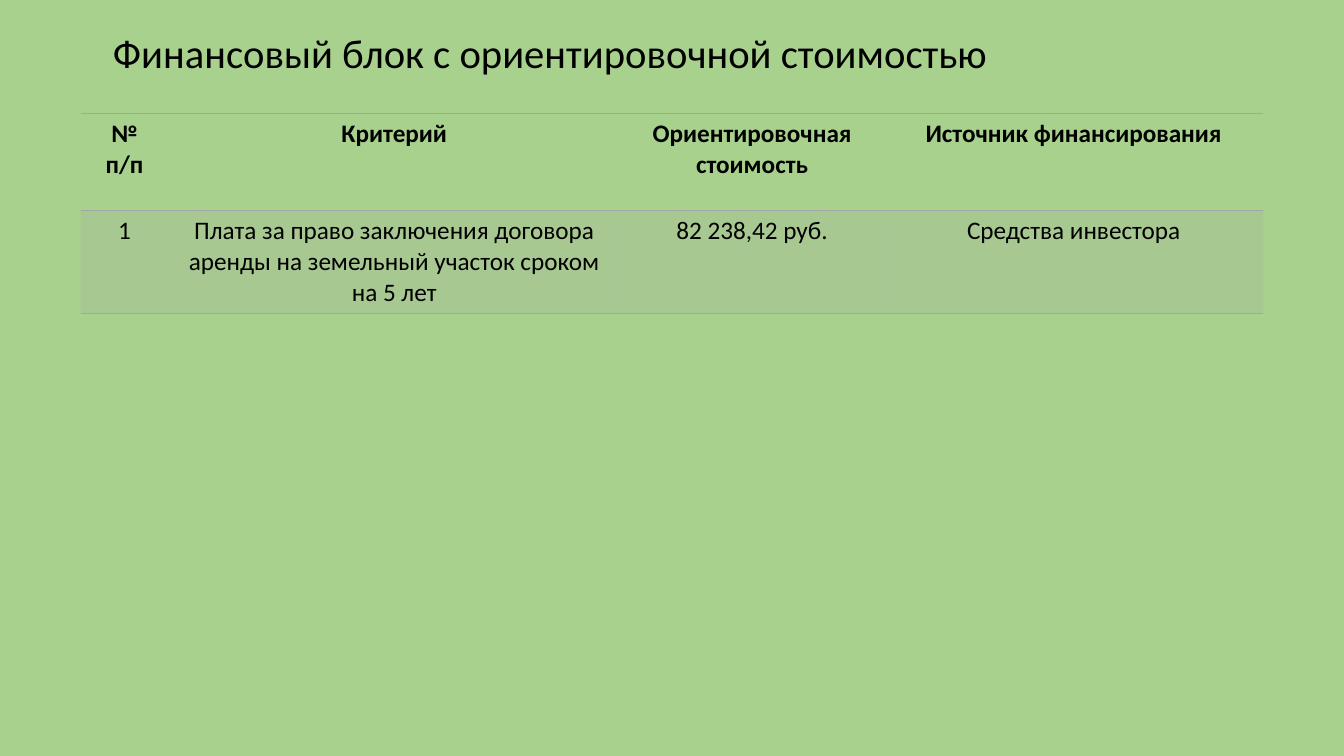
from lxml.etree import SubElement
from pptx import Presentation
from pptx.dml.color import RGBColor
from pptx.enum.text import MSO_ANCHOR, PP_ALIGN
from pptx.oxml.ns import qn
from pptx.util import Inches, Pt

COLORS = {"background": "A9D18E", "text": "000000", "gray": "A5A5A5"}
FONT = "Calibri"
PLAIN_TABLE_STYLE = "{2D5ABB26-0587-4C30-8999-92F81FD0307C}"
COLUMN_WIDTHS = (0.87, 4.48, 2.62, 3.76)
ROW_HEIGHTS = (0.96, 1.02)
COSTS = (
    ("№ п/п", "Критерий", "Ориентировочная стоимость", "Источник финансирования"),
    (
        "1",
        "Плата за право заключения договора аренды на земельный участок сроком на 5 лет",
        "82 238,42 руб.",
        "Средства инвестора",
    ),
)


def color(name):
    return RGBColor.from_string(COLORS[name])


def write(paragraph, text, size, bold=False):
    run = paragraph.add_run()
    run.text = text
    run.font.name = FONT
    run.font.size = Pt(size)
    run.font.bold = bold
    run.font.color.rgb = color("text")


def add_border(cell, side):
    line = SubElement(cell._tc.get_or_add_tcPr(), qn(f"a:{side}"), w=str(Pt(1)))
    fill = SubElement(line, qn("a:solidFill"))
    SubElement(fill, qn("a:srgbClr"), val=COLORS["gray"])


def shade(cell, opacity):
    cell.fill.solid()
    cell.fill.fore_color.rgb = color("gray")
    tint = cell._tc.tcPr.find(".//" + qn("a:solidFill") + "[last()]")
    tint = cell._tc.tcPr.find(qn("a:solidFill")).find(qn("a:srgbClr"))
    SubElement(tint, qn("a:alpha"), val=str(opacity * 1000))


def place_title(slide, left, top, width, height):
    title = slide.shapes.title
    title.left, title.top = Inches(left), Inches(top)
    title.width, title.height = Inches(width), Inches(height)
    frame = title.text_frame
    frame.word_wrap = True
    frame.vertical_anchor = MSO_ANCHOR.MIDDLE
    paragraph = frame.paragraphs[0]
    paragraph.alignment = PP_ALIGN.LEFT
    paragraph.line_spacing = 0.9
    write(paragraph, "Финансовый блок с ориентировочной стоимостью", 29)


def place_cost_table(slide, left, top):
    table = slide.shapes.add_table(
        len(COSTS), len(COLUMN_WIDTHS), Inches(left), Inches(top),
        Inches(sum(COLUMN_WIDTHS)), Inches(sum(ROW_HEIGHTS)),
    ).table
    table._tbl.tblPr.find(qn("a:tableStyleId")).text = PLAIN_TABLE_STYLE
    table.horz_banding = False
    for column, width in zip(table.columns, COLUMN_WIDTHS):
        column.width = Inches(width)
    for row, height, texts in zip(table.rows, ROW_HEIGHTS, COSTS):
        row.height = Inches(height)
        is_header = texts is COSTS[0]
        for cell, text in zip(row.cells, texts):
            paragraph = cell.text_frame.paragraphs[0]
            paragraph.alignment = PP_ALIGN.CENTER
            write(paragraph, text, 18, is_header)
            add_border(cell, "lnT")
            add_border(cell, "lnB")
            if is_header:
                cell.fill.background()
            else:
                shade(cell, 20)


def main():
    presentation = Presentation()
    presentation.slide_width = Inches(13.33)
    presentation.slide_height = Inches(7.5)
    slide = presentation.slides.add_slide(presentation.slide_layouts[5])
    slide.background.fill.solid()
    slide.background.fill.fore_color.rgb = color("background")
    place_title(slide, 1.02, 0.13, 11.5, 0.84)
    place_cost_table(slide, 0.8, 1.13)
    presentation.save("out.pptx")


if __name__ == "__main__":
    main()
